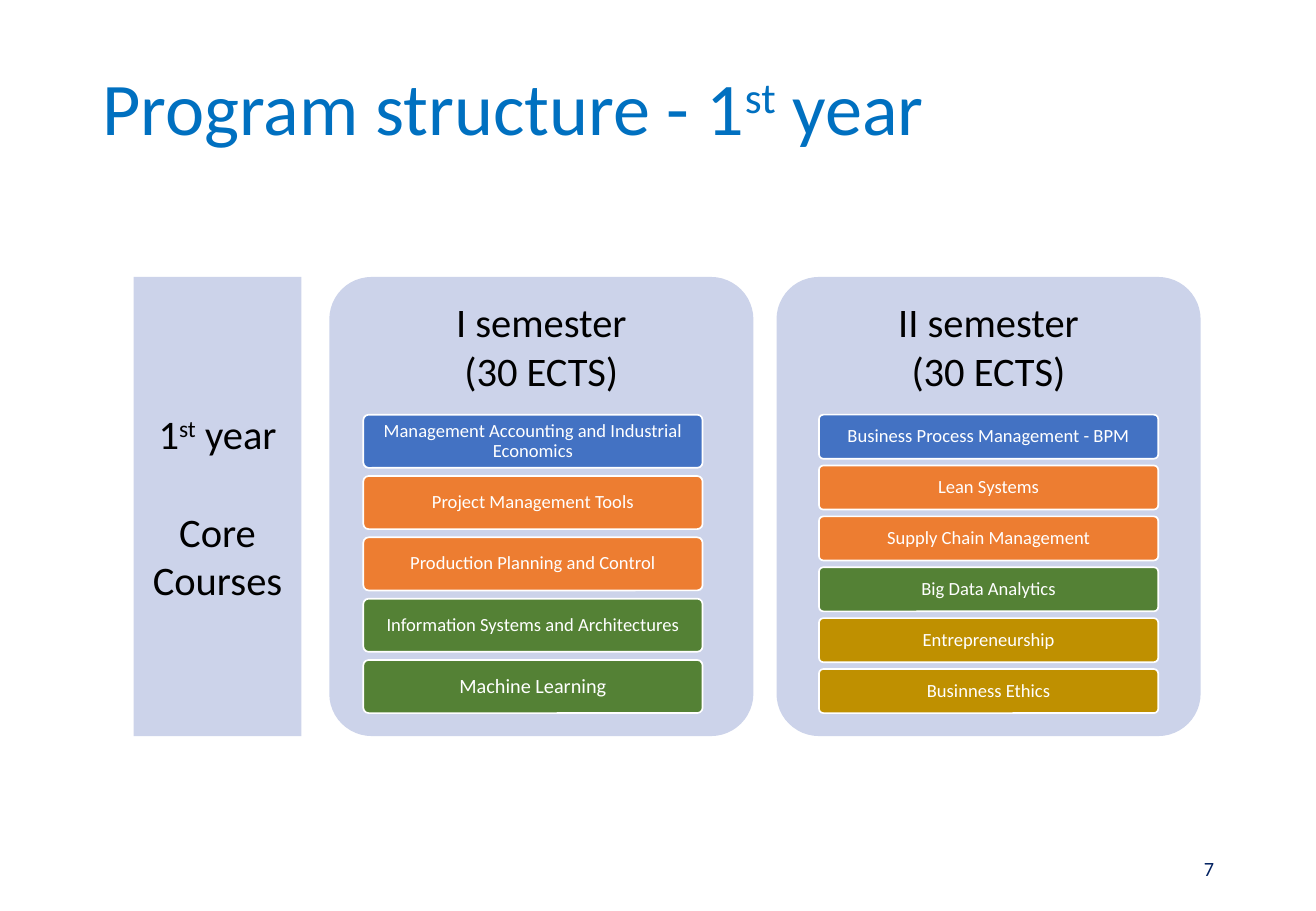
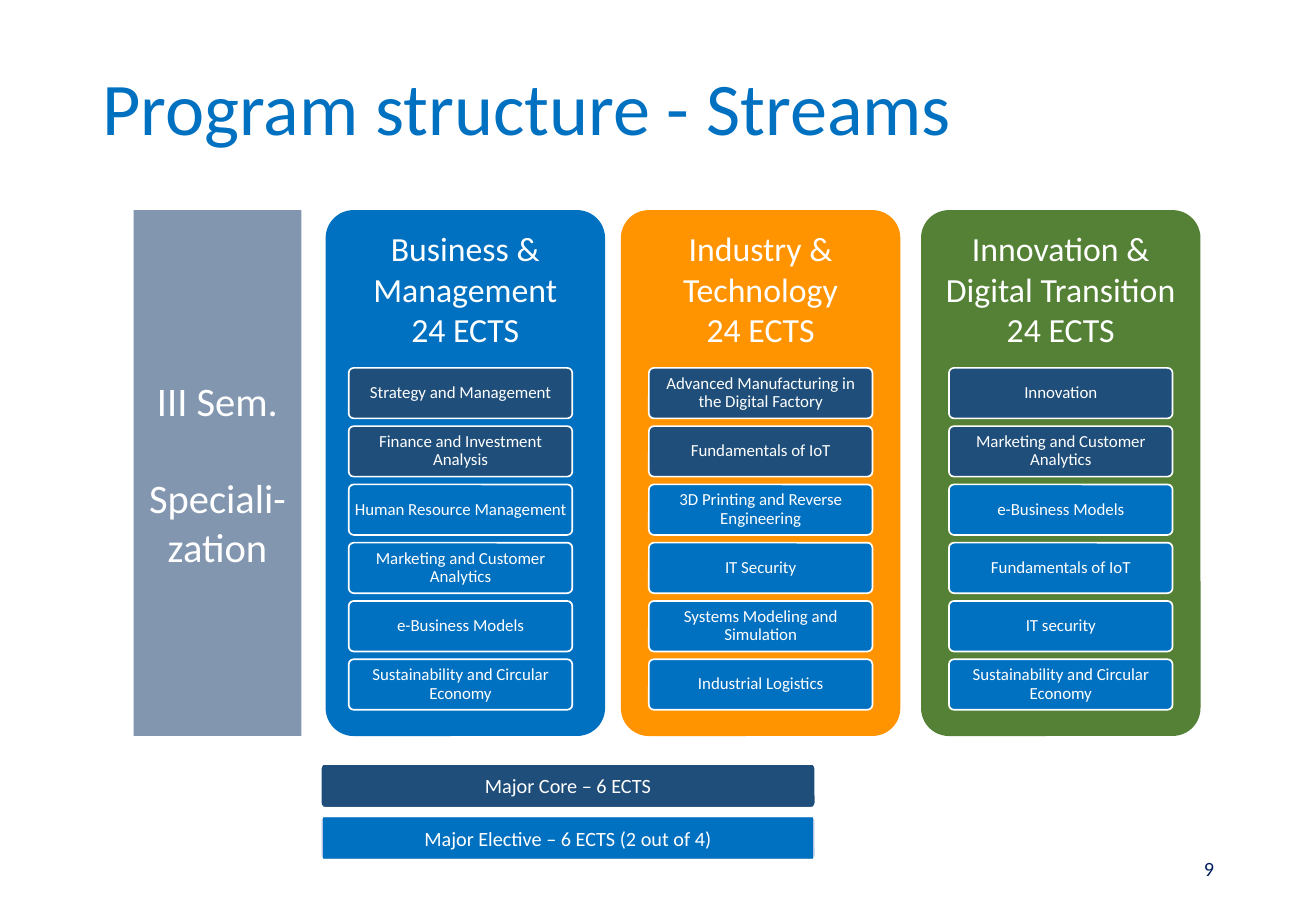
from pptx import Presentation
from pptx.dml.color import RGBColor
from pptx.enum.shapes import MSO_SHAPE
from pptx.enum.text import MSO_ANCHOR, PP_ALIGN
from pptx.util import Pt

PX = 9144  # 100 px to the inch
FONT = "Calibri"
COLORS = {
    "title": "0070C0", "number": "002060", "white": "FFFFFF", "black": "000000",
    "pale": "CCD3EA", "slate": "8296B0", "edge": "B3C6E7",
    "blue": "4372C3", "orange": "ED7D31", "green": "548135", "gold": "BF9000",
    "amber": "FF9300", "core": "1E4E79", "elective": "0070C0",
}

# Text between ^ marks is superscript.
# Card: left, course left, fill, heading lines, courses as (name, fill[, size])
SLIDES = [
    {
        "title": "Program structure - 1^st^ year", "number": "7",
        "top": 228, "card_width": 349, "text": "black",
        "side": ("pale", ["1^st^ year", "Core Courses"]),
        "heading_size": 24, "course_size": 11,
        "cards": [
            (271, 299, "pale", ["I semester", "(30 ECTS)"], [
                ("Management Accounting and Industrial Economics", "blue"),
                ("Project Management Tools", "orange"),
                ("Production Planning and Control", "orange"),
                ("Information Systems and Architectures", "green"),
                ("Machine Learning", "green", 12),
            ]),
            (639, 674, "pale", ["II semester", "(30 ECTS)"], [
                ("Business Process Management - BPM", "blue"),
                ("Lean Systems", "orange"),
                ("Supply Chain Management", "orange"),
                ("Big Data Analytics", "green"),
                ("Entrepreneurship", "gold"),
                ("Businness Ethics", "gold"),
            ]),
        ],
        "legend": [],
    },
    {
        "title": "Program structure - Streams", "number": "9",
        "top": 173, "card_width": 230, "text": "white",
        "side": ("slate", ["III Sem.", "Speciali-zation"]),
        "heading_size": 20, "course_size": 10,
        "cards": [
            (268, 287, "elective", ["Business & Management", "24 ECTS"], [
                ("Strategy and Management", "core"),
                ("Finance and Investment Analysis", "core"),
                ("Human Resource Management", "elective"),
                ("Marketing and Customer Analytics", "elective"),
                ("e-Business Models", "elective"),
                ("Sustainability and Circular Economy", "elective"),
            ]),
            (511, 534, "amber", ["Industry & Technology", "24 ECTS"], [
                ("Advanced Manufacturing in the Digital Factory", "core"),
                ("Fundamentals of IoT", "core"),
                ("3D Printing and Reverse Engineering", "elective"),
                ("IT Security", "elective"),
                ("Systems Modeling and Simulation", "elective"),
                ("Industrial Logistics", "elective"),
            ]),
            (758, 781, "green", ["Innovation & Digital Transition", "24 ECTS"], [
                ("Innovation", "core"),
                ("Marketing and Customer Analytics", "core"),
                ("e-Business Models", "elective"),
                ("Fundamentals of IoT", "elective"),
                ("IT security", "elective"),
                ("Sustainability and Circular Economy", "elective"),
            ]),
        ],
        "legend": [("Major Core – 6 ECTS", "core", "core"),
                   ("Major Elective – 6 ECTS (2 out of 4)", "elective", "edge")],
    },
]

BOTTOM = 606
SIDE_LEFT, SIDE_WIDTH = 110, 138
HEADING_SHARE, COURSES_SHARE, COURSE_WIDTH_SHARE = 0.3, 0.65, 0.8
COURSE_GAP = 0.154  # of a course's height
LEGEND_LEFT, LEGEND_TOP, LEGEND_WIDTH, LEGEND_HEIGHT, LEGEND_PITCH = 264, 629, 407, 36, 43


def rgb(name):
    return RGBColor.from_string(COLORS[name])


def px(*lengths):
    return [round(n * PX) for n in lengths]


def write(tf, lines, size, color, align=PP_ALIGN.CENTER, insets=(10, 5, 10, 5),
          line_spacing=None, gap=0):
    """Fill a text frame; insets are left, top, right, bottom, and gap is points between lines."""
    tf.word_wrap = True
    tf.vertical_anchor = MSO_ANCHOR.MIDDLE
    tf.margin_left, tf.margin_top, tf.margin_right, tf.margin_bottom = px(*insets)
    for i, line in enumerate(lines):
        p = tf.paragraphs[0] if i == 0 else tf.add_paragraph()
        p.alignment = align
        p.space_before = Pt(gap if i else 0)
        if line_spacing:
            p.line_spacing = line_spacing
        for j, part in enumerate(line.split("^")):
            r = p.add_run()
            r.text = part
            r.font.name, r.font.size = FONT, Pt(size)
            r.font.color.rgb = rgb(color)
            if j % 2:
                r._r.get_or_add_rPr().set("baseline", "30000")


def add_box(s, box, fill, rounded=True, outlined=False):
    kind = MSO_SHAPE.ROUNDED_RECTANGLE if rounded else MSO_SHAPE.RECTANGLE
    sp = s.shapes.add_shape(kind, *px(*box))
    sp.shadow.inherit = False
    if rounded:
        sp.adjustments[0] = 0.1
    sp.fill.solid()
    sp.fill.fore_color.rgb = rgb(fill)
    if outlined:
        sp.line.color.rgb = rgb("white")
        sp.line.width = Pt(1)
    else:
        sp.line.fill.background()
    return sp


def add_frame(s, title, number):
    """Title and slide number, alike on every slide."""
    sp = s.shapes.title
    sp.left, sp.top, sp.width, sp.height = px(74, 40, 934, 104)
    write(sp.text_frame, [title], 44, "title", PP_ALIGN.LEFT, line_spacing=0.9)
    sp = s.shapes.add_textbox(*px(765, 695, 244, 40))
    write(sp.text_frame, [number], 12, "number", PP_ALIGN.RIGHT)


def add_card(s, data, card):
    left, course_left, fill, heading, courses = card
    top, width = data["top"], data["card_width"]
    height = BOTTOM - top
    sp = add_box(s, (left, top, width, height), fill)
    below_heading = height * (1 - HEADING_SHARE)
    write(sp.text_frame, heading, data["heading_size"], data["text"],
          insets=(8, 8, 8, 8 + below_heading))

    n = len(courses)
    course_height = height * COURSES_SHARE / (n + (n - 1) * COURSE_GAP)
    for i, (name, color, *size) in enumerate(courses):
        y = top + height * HEADING_SHARE + i * course_height * (1 + COURSE_GAP)
        sp = add_box(s, (course_left, y, width * COURSE_WIDTH_SHARE, course_height),
                     color, outlined=True)
        write(sp.text_frame, [name], size[0] if size else data["course_size"], "white",
              insets=(3, 2, 3, 2), line_spacing=0.9)


def add_legend(s, entries):
    for i, (label, fill, edge) in enumerate(entries):
        y = LEGEND_TOP + i * LEGEND_PITCH
        add_box(s, (LEGEND_LEFT, y, LEGEND_WIDTH, LEGEND_HEIGHT), edge, outlined=True)
        sp = add_box(s, (LEGEND_LEFT + 2, y + 1, LEGEND_WIDTH - 4, LEGEND_HEIGHT - 2),
                     fill, rounded=False)
        write(sp.text_frame, [label], 12, "white", insets=(4, 3, 4, 3))


def main():
    prs = Presentation()
    prs.slide_width, prs.slide_height = px(1083, 750)
    for data in SLIDES:
        s = prs.slides.add_slide(prs.slide_layouts[5])
        add_frame(s, data["title"], data["number"])
        fill, lines = data["side"]
        sp = add_box(s, (SIDE_LEFT, data["top"], SIDE_WIDTH, BOTTOM - data["top"]),
                     fill, rounded=False)
        write(sp.text_frame, lines, 24, data["text"], insets=(10, 10, 10, 10), gap=29)
        for card in data["cards"]:
            add_card(s, data, card)
        add_legend(s, data["legend"])
    prs.save("out.pptx")


if __name__ == "__main__":
    main()
